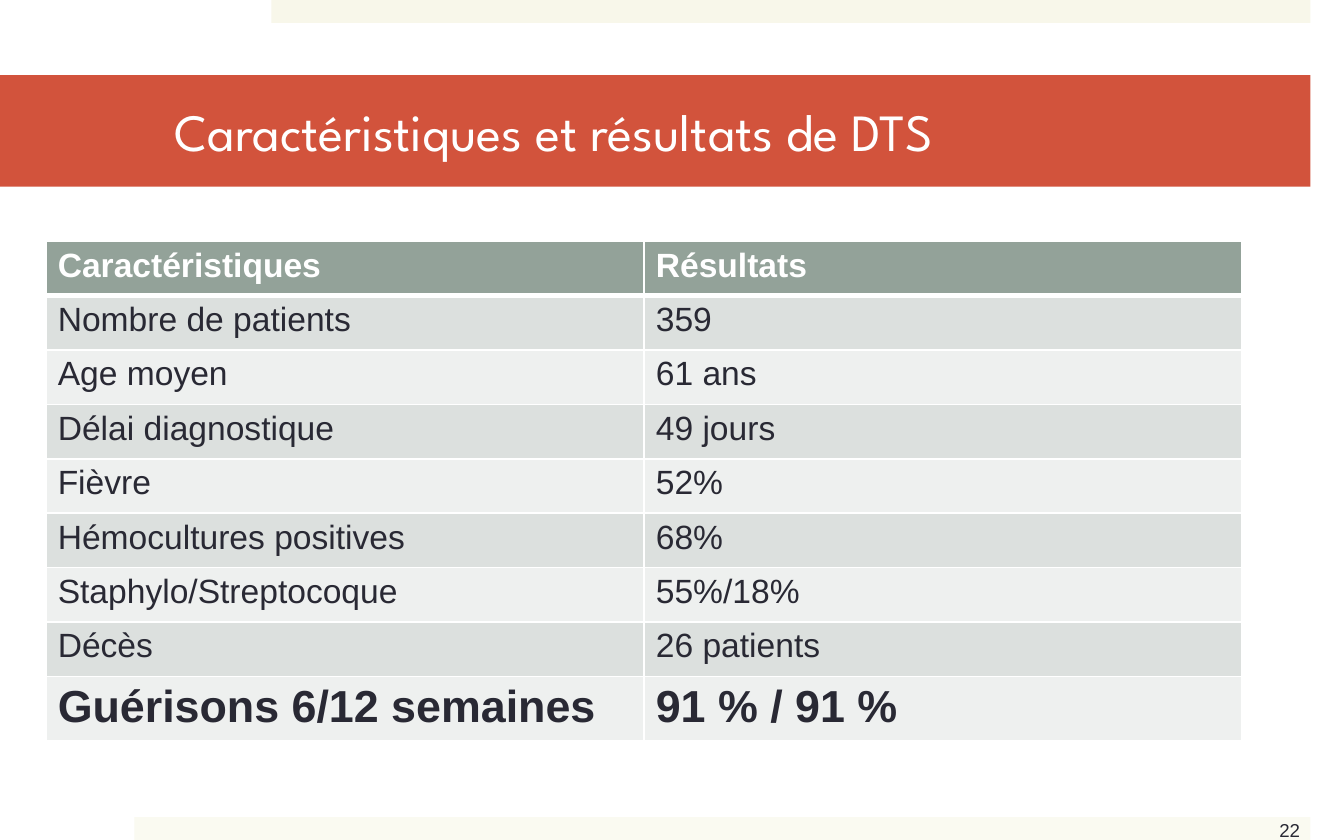
from dataclasses import dataclass

from lxml import etree
from pptx import Presentation
from pptx import util as u
from pptx.dml.color import RGBColor
from pptx.enum import shapes, text
from pptx.oxml import ns

PX = u.Inches(1) // 200


def px(length):
    return u.Emu(length * PX)


@dataclass(frozen=True)
class Theme:
    heading_font: str = "League Spartan"
    body_font: str = "Arial"
    title_size: int = 28
    highlight_size: int = 24
    body_size: int = 18
    number_size: int = 10
    ink: str = "292934"
    white: str = "FFFFFF"
    title_band: str = "D2533C"
    top_bar: str = "F8F7EA"
    bottom_bar: str = "FAFAF1"
    header: str = "93A299"
    stripes: tuple = ("DCE0DE", "EEF0EF")


def paint(item, color):
    item.fill.solid()
    item.fill.fore_color.rgb = RGBColor.from_string(color)


def write(frame, content, *, font, size, color, bold=False):
    paragraph = frame.paragraphs[0]
    paragraph.alignment = text.PP_ALIGN.LEFT
    run = paragraph.add_run()
    run.text = content
    run.font.name = font
    run.font.size = u.Pt(size)
    run.font.bold = bold
    run.font.color.rgb = RGBColor.from_string(color)


def set_borders(cell, color, **widths):
    """Draw cell borders; widths maps L, R, T and B, in that order, to points."""
    properties = cell._tc.get_or_add_tcPr()
    for index, (side, width) in enumerate(widths.items()):
        line = etree.Element(ns.qn(f"a:ln{side}"), w=str(u.Pt(width)))
        fill = etree.SubElement(line, ns.qn("a:solidFill"))
        etree.SubElement(fill, ns.qn("a:srgbClr"), val=color)
        properties.insert(index, line)


class SlideBuilder:
    def __init__(self, slide, theme):
        self.slide = slide
        self.theme = theme

    def bar(self, left, top, width, height, color):
        shape = self.slide.shapes.add_shape(
            shapes.MSO_SHAPE.RECTANGLE, px(left), px(top), px(width), px(height))
        shape.shadow.inherit = False
        shape.line.fill.background()
        paint(shape, color)

    def title(self, content, left, top, width, height):
        shape = self.slide.shapes.title
        shape.left, shape.top = px(left), px(top)
        shape.width, shape.height = px(width), px(height)
        paint(shape, self.theme.title_band)
        frame = shape.text_frame
        frame.auto_size = text.MSO_AUTO_SIZE.NONE
        frame.vertical_anchor = text.MSO_ANCHOR.MIDDLE
        frame.margin_left, frame.margin_right = px(260), px(60)
        frame.margin_top = frame.margin_bottom = px(10)
        write(frame, content, font=self.theme.heading_font,
              size=self.theme.title_size, color=self.theme.white)

    def page_number(self, content, left, top, width, height):
        box = self.slide.shapes.add_textbox(px(left), px(top), px(width), px(height))
        box.text_frame.word_wrap = True
        box.text_frame.auto_size = text.MSO_AUTO_SIZE.SHAPE_TO_FIT_TEXT
        write(box.text_frame, content, font=self.theme.body_font,
              size=self.theme.number_size, color=self.theme.ink)

    def table(self, rows, left, top, column_width, row_height, last_height):
        """Add a striped table with a header row and an emphasised last row."""
        theme = self.theme
        last = len(rows) - 1
        columns = len(rows[0])
        table = self.slide.shapes.add_table(
            len(rows), columns, px(left), px(top), px(column_width * columns),
            px(row_height * last + last_height)).table
        for column in table.columns:
            column.width = px(column_width)
        for r, row in enumerate(rows):
            table.rows[r].height = px(last_height if r == last else row_height)
            for c, content in enumerate(row):
                cell = table.cell(r, c)
                cell.margin_left = cell.margin_right = px(18)
                cell.margin_top = cell.margin_bottom = px(8)
                paint(cell, theme.stripes[(r - 1) % 2] if r else theme.header)
                set_borders(cell, theme.white, L=1, R=1,
                            T=3 if r == 1 else 1, B=3 if r == 0 else 1)
                write(cell.text_frame, content, font=theme.body_font,
                      size=theme.highlight_size if r == last else theme.body_size,
                      color=theme.ink if r else theme.white, bold=r in (0, last))


RESULTS = [
    ("Caractéristiques", "Résultats"),
    ("Nombre de patients", "359"),
    ("Age moyen", "61 ans"),
    ("Délai diagnostique", "49 jours"),
    ("Fièvre", "52%"),
    ("Hémocultures positives", "68%"),
    ("Staphylo/Streptocoque", "55%/18%"),
    ("Décès", "26 patients"),
    ("Guérisons 6/12 semaines", "91 % / 91 %"),
]


def main():
    presentation = Presentation()
    presentation.slide_width, presentation.slide_height = px(2000), px(1250)
    theme = Theme()
    title_only = presentation.slide_layouts[5]
    builder = SlideBuilder(presentation.slides.add_slide(title_only), theme)
    builder.bar(404, 0, 1546, 34, theme.top_bar)
    builder.bar(200, 1216, 1750, 34, theme.bottom_bar)
    builder.page_number("22", 1884, 1208, 82, 56)
    builder.title("Caractéristiques et résultats de DTS", 0, 112, 1950, 166)
    builder.table(RESULTS, left=68, top=359, column_width=890,
                  row_height=81, last_height=92)
    presentation.save("out.pptx")


if __name__ == "__main__":
    main()
